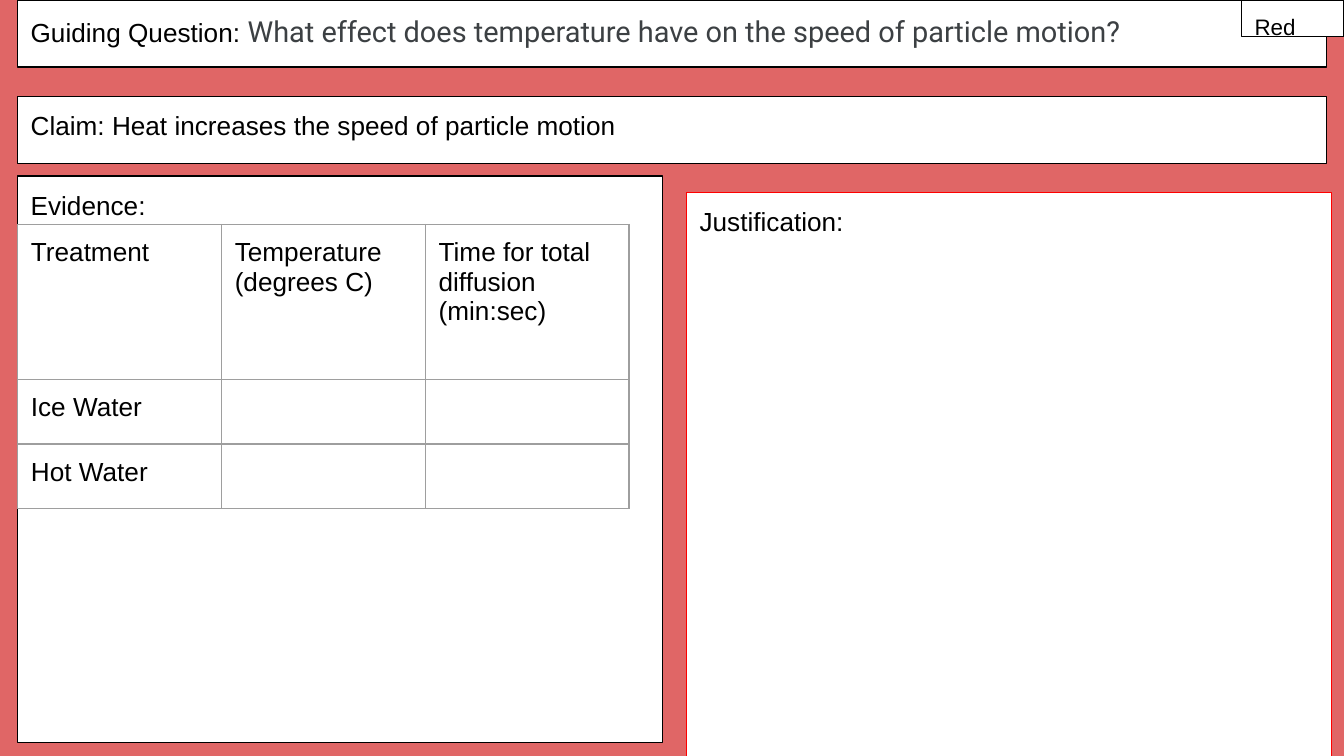
from lxml import etree
from pptx import Presentation
from pptx.dml.color import RGBColor
from pptx.enum.shapes import MSO_SHAPE
from pptx.enum.text import MSO_ANCHOR, PP_ALIGN
from pptx.oxml.ns import qn
from pptx.util import Inches, Pt

RECT = MSO_SHAPE.RECTANGLE
TOP = MSO_ANCHOR.TOP
LEFT = PP_ALIGN.LEFT

BLACK = RGBColor(0x00, 0x00, 0x00)
WHITE = RGBColor(0xFF, 0xFF, 0xFF)
RED = RGBColor(0xFF, 0x00, 0x00)
CORAL = RGBColor(0xE0, 0x66, 0x66)
CHARCOAL = RGBColor(0x3C, 0x40, 0x43)
GREY = RGBColor(0x9E, 0x9E, 0x9E)


def add_run(p, text, size=14, font="Arial", color=BLACK):
    p.alignment = LEFT
    r = p.add_run()
    r.text = text
    r.font.size = Pt(size)
    r.font.name = font
    r.font.color.rgb = color


class Board:
    """Slide on a square grid, 100 columns wide, with one shared style."""

    LINE = Pt(0.75)
    INSET = Inches(0.1)

    def __init__(self, prs):
        self.s = prs.slides.add_slide(prs.slide_layouts[6])
        self.unit = prs.slide_width / 100
        fill = self.s.background.fill
        fill.solid()
        fill.fore_color.rgb = CORAL

    def grid(self, *cells):
        return [round(c * self.unit) for c in cells]

    def inset(self, frame):
        frame.margin_left = frame.margin_right = self.INSET
        frame.margin_top = frame.margin_bottom = self.INSET
        frame.vertical_anchor = TOP

    def box(self, col, row, width, height, text, line=BLACK, **style):
        sp = self.s.shapes.add_shape(RECT, *self.grid(col, row, width, height))
        sp.shadow.inherit = False
        sp.fill.solid()
        sp.fill.fore_color.rgb = WHITE
        sp.line.color.rgb = line
        sp.line.width = self.LINE
        tf = sp.text_frame
        tf.word_wrap = True
        self.inset(tf)
        p = tf.paragraphs[0]
        add_run(p, text, **style)
        return p

    def border(self, cell):
        tcPr = cell._tc.get_or_add_tcPr()
        for side in ("lnL", "lnR", "lnT", "lnB"):
            ln = etree.SubElement(tcPr, qn(f"a:{side}"), w=str(self.LINE))
            fill = etree.SubElement(ln, qn("a:solidFill"))
            etree.SubElement(fill, qn("a:srgbClr"), val=str(GREY))

    def empty(self, p):
        end = etree.SubElement(p._p, qn("a:endParaRPr"), sz="1800")
        etree.SubElement(end, qn("a:latin"), typeface="Arial")

    def table(self, col, row, col_width, heights, rows):
        n = len(rows[0])
        frame = self.s.shapes.add_table(
            len(rows), n, *self.grid(col, row, col_width * n, sum(heights)))
        table = frame.table
        table.first_row = table.horz_banding = False
        for column in table.columns:
            column.width, = self.grid(col_width)
        for i, texts in enumerate(rows):
            table.rows[i].height, = self.grid(heights[i])
            for j, text in enumerate(texts):
                cell = table.cell(i, j)
                self.inset(cell)
                self.border(cell)
                cell.fill.background()
                p = cell.text_frame.paragraphs[0]
                if text:
                    add_run(p, text)
                else:
                    self.empty(p)


def main():
    prs = Presentation()
    prs.slide_width = Inches(10)
    prs.slide_height = prs.slide_width * 9 // 16
    board = Board(prs)

    question = board.box(1.3, 0, 97.4, 5, "Guiding Question: ")
    add_run(question,
            "What effect does temperature have on the speed of particle motion?",
            size=15.5, font="Roboto", color=CHARCOAL)
    board.box(1.3, 7.17, 97.4, 5,
              "Claim: Heat increases the speed of particle motion")
    board.box(1.3, 13.1, 48, 42.15, "Evidence:")
    board.box(51.07, 14.32, 48, 42.15, "Justification:", line=RED)
    board.box(92.36, 0, 7.64, 2.7, "Red", size=12)
    board.table(1.3, 16.7, 15.17, [11.53, 4.4, 4.4], [
        ["Treatment", "Temperature (degrees C)",
         "Time for total diffusion (min:sec)"],
        ["Ice Water", "", ""],
        ["Hot Water", "", ""],
    ])
    prs.save("out.pptx")


if __name__ == "__main__":
    main()
